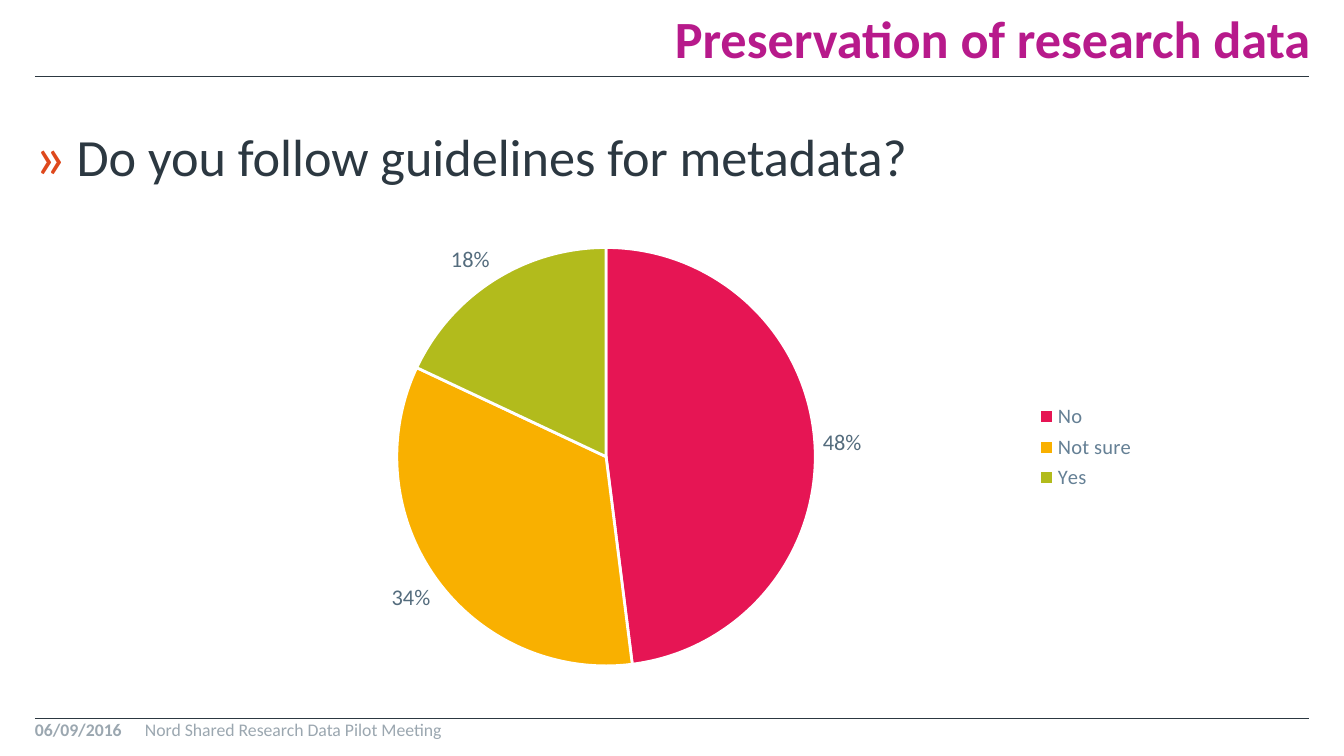
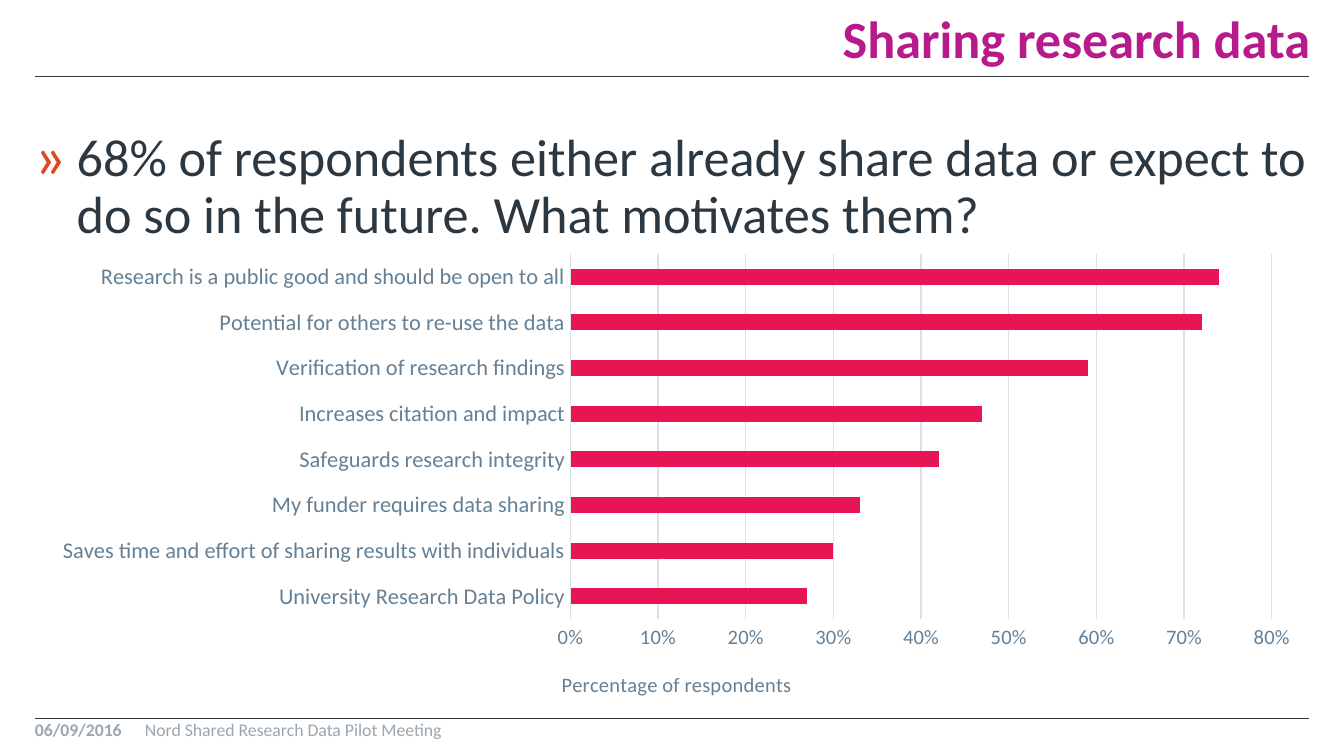
import pptx
import pptx.chart.data
import pptx.dml.color
import pptx.enum.chart
import pptx.enum.shapes
import pptx.enum.text
import pptx.oxml
import pptx.oxml.ns
import pptx.util
from lxml import etree
from pptx.util import Cm, Pt

COLORS = {
    "title": "B71A8B", "ink": "2C3841", "footer": "9BA7B0", "bullet": "DE481C",
    "axis": "658095", "label": "546C7D", "grid": "DBE2E7", "white": "FFFFFF",
    "red": "E61554", "amber": "F9B000", "green": "B2BB1C",
}
FONT = "Calibri"
LEFT, RIGHT = 0.66, 24.74
RULES = (1.45, 13.59)
TITLE_BOX = (3.91, 0, 20.85, 1.3)
BODY_BOX = (LEFT, 2.49, 24.1, 10.74)
FOOTERS = [
    ("06/09/2016", (LEFT, RULES[1], 2.01, 0.51), True),
    ("Nord Shared Research Data Pilot Meeting", (2.74, RULES[1], 19.89, 0.51), False),
]
SERIES = "Series 1"

METADATA = {
    "title": "Preservation of research data",
    "point": "Do you follow guidelines for metadata?",
    "box": (3.71, 3.96, 18.01, 8.99),
    "plot": {"x": 0.21, "y": 0.08, "w": 0.44, "h": 0.88},
    "answers": [("No", 0.48, "red"), ("Not sure", 0.34, "amber"), ("Yes", 0.18, "green")],
}
SHARING = {
    "title": "Sharing research data",
    "point": "68% of respondents either already share data or expect to do so in the future. "
             "What motivates them?",
    "box": (LEFT, 4.62, 24.1, 8.97),
    "plot": {"x": 0.42, "y": 0.02, "w": 0.55, "h": 0.77},
    "axis_title": "Percentage of respondents",
    "axis_title_place": {"x": 0.41, "y": 0.89},
    "motives": [
        ("University Research Data Policy", 0.27),
        ("Saves time and effort of sharing results with individuals", 0.3),
        ("My funder requires data sharing", 0.33),
        ("Safeguards research integrity", 0.42),
        ("Increases citation and impact", 0.47),
        ("Verification of research findings", 0.59),
        ("Potential for others to re-use the data", 0.72),
        ("Research is a public good and should be open to all", 0.74),
    ],
}


def rgb(name):
    return pptx.dml.color.RGBColor.from_string(COLORS[name])


def set_font(font, size, color, bold=False):
    font.name, font.size, font.bold = FONT, Pt(size), bold
    font.color.rgb = rgb(color)


def write(shape, text, size, color, bold=False, align="LEFT", anchor="TOP", bullet=None):
    frame = shape.text_frame
    frame.word_wrap = True
    frame.auto_size = pptx.enum.text.MSO_AUTO_SIZE.NONE
    frame.vertical_anchor = getattr(pptx.enum.text.MSO_ANCHOR, anchor)
    frame.margin_left = frame.margin_right = frame.margin_top = frame.margin_bottom = 0
    para = frame.paragraphs[0]
    para.alignment = getattr(pptx.enum.text.PP_ALIGN, align)
    if bullet:
        para.line_spacing = 0.9
        add_bullet(para, bullet)
    span = para.add_run()
    span.text = text
    set_font(span.font, size, color, bold)


def add_bullet(para, mark):
    properties = para._p.get_or_add_pPr()
    indent = Cm(0.79)
    properties.set("marL", str(indent))
    properties.set("indent", str(-indent))
    namespace = pptx.oxml.ns.nsdecls("a")
    for markup in (
        f'<a:buClr {namespace}><a:srgbClr val="{COLORS["bullet"]}"/></a:buClr>',
        f'<a:buSzPct {namespace} val="120000"/>',
        f'<a:buFont {namespace} typeface="{FONT}"/>',
        f'<a:buChar {namespace} char="{mark}"/>',
    ):
        properties.append(pptx.oxml.parse_xml(markup))


def add_rule(page, height):
    rule = page.shapes.add_connector(
        pptx.enum.shapes.MSO_CONNECTOR.STRAIGHT, Cm(LEFT), Cm(height), Cm(RIGHT), Cm(height))
    rule.line.color.rgb = rgb("ink")
    rule.line.width = Pt(0.5)
    etree.SubElement(rule._element.spPr, pptx.oxml.ns.qn("a:effectLst"))


def add_text_box(page, place, text, **style):
    box = page.shapes.add_textbox(*map(Cm, place))
    write(box, text, **style)


def add_page(deck, content):
    page = deck.slides.add_slide(deck.slide_layouts[5])
    for height in RULES:
        add_rule(page, height)
    title = page.shapes.title
    title.left, title.top, title.width, title.height = map(Cm, TITLE_BOX)
    write(title, content["title"], size=28, color="title", bold=True,
          align="RIGHT", anchor="BOTTOM")
    for text, place, bold in FOOTERS:
        add_text_box(page, place, text, size=9.5, color="footer", bold=bold)
    add_text_box(page, BODY_BOX, content["point"], size=28, color="ink", bullet="»")
    return page


def set_layout(parent, index, fractions, inner=False):
    qn = pptx.oxml.ns.qn
    for old in parent.findall(qn("c:layout")):
        parent.remove(old)
    layout = parent.makeelement(qn("c:layout"))
    parent.insert(index, layout)
    manual = etree.SubElement(layout, qn("c:manualLayout"))
    settings = [("layoutTarget", "inner")] if inner else []
    settings += [("xMode", "edge"), ("yMode", "edge"), *fractions.items()]
    for tag, value in settings:
        etree.SubElement(manual, qn(f"c:{tag}")).set("val", str(value))


def add_chart(page, kind, content, rows):
    data = pptx.chart.data.CategoryChartData(number_format="0%")
    data.categories = [row[0] for row in rows]
    data.add_series(SERIES, [row[1] for row in rows])
    kind = getattr(pptx.enum.chart.XL_CHART_TYPE, kind)
    chart = page.shapes.add_chart(kind, *map(Cm, content["box"]), data).chart
    chart.has_title = False
    chart.has_legend = False
    set_font(chart.font, 10, "ink")
    area = chart.element.find(".//" + pptx.oxml.ns.qn("c:plotArea"))
    set_layout(area, 0, content["plot"], inner=True)
    return chart


def add_answers_pie(page, content):
    answers = content["answers"]
    chart = add_chart(page, "PIE", content, answers)
    chart.has_legend = True
    chart.legend.position = pptx.enum.chart.XL_LEGEND_POSITION.RIGHT
    chart.legend.include_in_layout = False
    set_font(chart.legend.font, 11, "axis")
    plot = chart.plots[0]
    plot.vary_by_categories = True
    for index, answer in enumerate(answers):
        style = plot.series[0].points[index].format
        style.fill.solid()
        style.fill.fore_color.rgb = rgb(answer[2])
        style.line.color.rgb = rgb("white")
        style.line.width = Pt(1.5)
    plot.has_data_labels = True
    labels = plot.data_labels
    labels.show_value = True
    labels.show_percentage = False
    labels.number_format = "0%"
    labels.number_format_is_linked = False
    labels.position = pptx.enum.chart.XL_LABEL_POSITION.OUTSIDE_END
    set_font(labels.font, 12, "label")


def add_motives_bars(page, content):
    chart = add_chart(page, "BAR_CLUSTERED", content, content["motives"])
    plot = chart.plots[0]
    plot.vary_by_categories = False
    plot.gap_width = 182
    fill = plot.series[0].format.fill
    fill.solid()
    fill.fore_color.rgb = rgb("red")

    categories, values = chart.category_axis, chart.value_axis
    for axis, size in ((categories, 12), (values, 11)):
        axis.major_tick_mark = axis.minor_tick_mark = pptx.enum.chart.XL_TICK_MARK.NONE
        set_font(axis.tick_labels.font, size, "axis")
    values.minimum_scale, values.maximum_scale, values.major_unit = 0, 0.8, 0.1
    values.tick_labels.number_format = "0%"
    values.tick_labels.number_format_is_linked = False
    values.format.line.fill.background()
    values.has_major_gridlines = True
    for line in (categories.format.line, values.major_gridlines.format.line):
        line.color.rgb = rgb("grid")
        line.width = Pt(0.75)

    title = values.axis_title
    span = title.text_frame.paragraphs[0].add_run()
    span.text = content["axis_title"]
    set_font(span.font, 11, "axis")
    set_layout(title.element, 1, content["axis_title_place"])


def main():
    deck = pptx.Presentation()
    deck.slide_width, deck.slide_height = Cm(25.4), Cm(14.29)
    add_answers_pie(add_page(deck, METADATA), METADATA)
    add_motives_bars(add_page(deck, SHARING), SHARING)
    deck.save("out.pptx")


if __name__ == "__main__":
    main()
